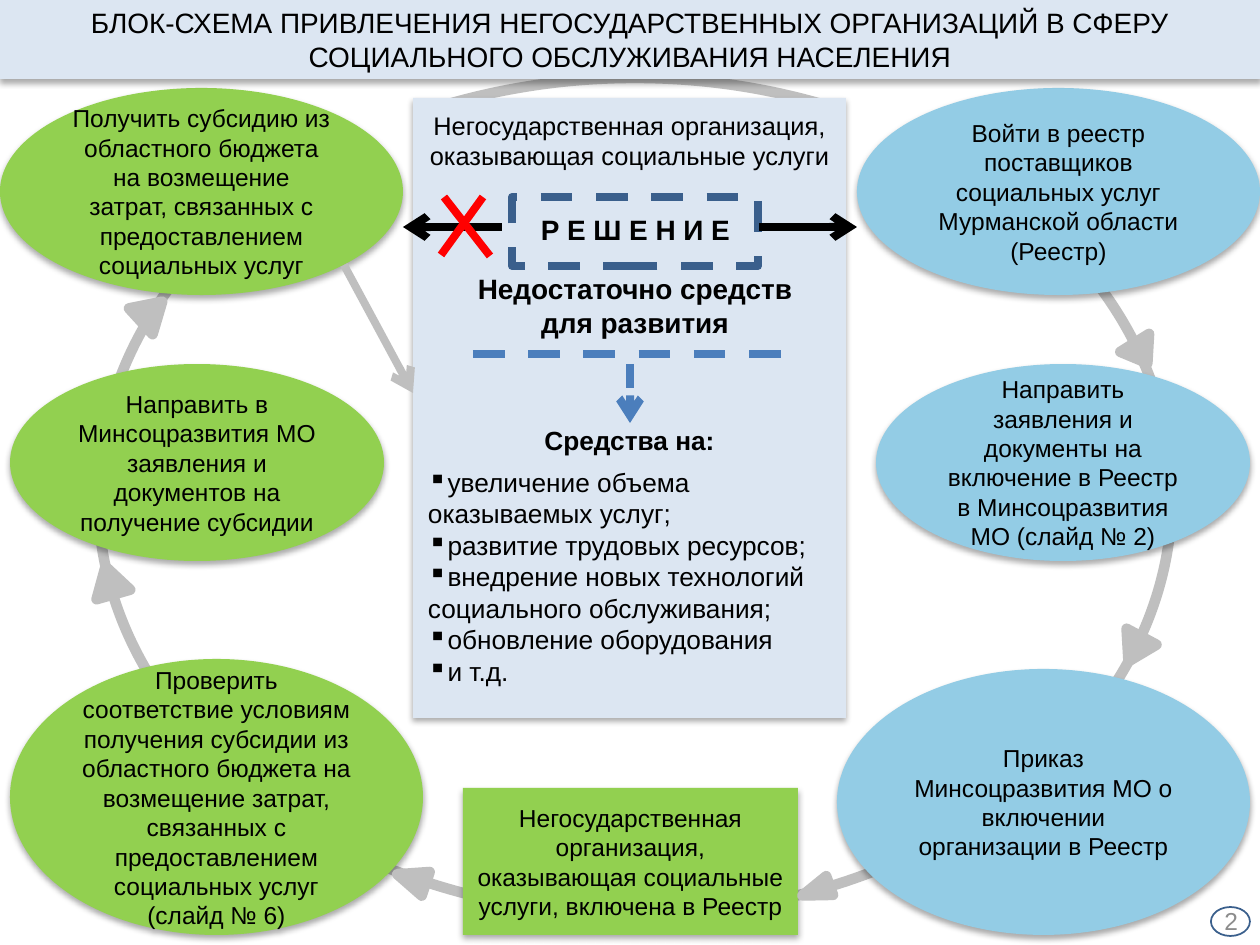
from lxml.etree import SubElement
from pptx import Presentation
from pptx.dml.color import RGBColor
from pptx.enum.dml import MSO_LINE
from pptx.enum.shapes import MSO_CONNECTOR, MSO_SHAPE
from pptx.enum.text import MSO_ANCHOR, PP_ALIGN
from pptx.oxml.ns import qn
from pptx.util import Pt

SCALE = 914400 / 126
GREEN, BLUE, PALE, GREY = "92D050", "93CCE5", "DCE6F2", "BFBFBF"
BLACK, RED, WHITE, NAVY, STEEL = "000000", "FF0000", "FFFFFF", "3A5F8C", "4B7EBC"
RECTANGLE, ELLIPSE, TRIANGLE = MSO_SHAPE.RECTANGLE, MSO_SHAPE.OVAL, MSO_SHAPE.ISOSCELES_TRIANGLE

TITLE = ("БЛОК-СХЕМА ПРИВЛЕЧЕНИЯ НЕГОСУДАРСТВЕННЫХ ОРГАНИЗАЦИЙ В СФЕРУ "
         "СОЦИАЛЬНОГО ОБСЛУЖИВАНИЯ НАСЕЛЕНИЯ")
PANEL_HEADING = "Негосударственная организация, оказывающая социальные услуги"
PURPOSES = ["увеличение объема оказываемых услуг;", "развитие трудовых ресурсов;",
            "внедрение новых технологий социального обслуживания;",
            "обновление оборудования", "и т.д."]
STEPS = [
    (ELLIPSE, (837, 669, 413, 266), BLUE,
     ["Приказ Минсоцразвития МО о включении организации в Реестр"]),
    (ELLIPSE, (10, 364, 374, 197), GREEN,
     ["Направить в Минсоцразвития МО заявления и документов на получение субсидии"]),
    (ELLIPSE, (0, 88, 403, 207), GREEN,
     ["Получить субсидию из областного бюджета на возмещение затрат, "
      "связанных с предоставлением социальных услуг"]),
    (ELLIPSE, (876, 364, 374, 197), BLUE,
     ["Направить заявления и документы на включение в Реестр "
      "в Минсоцразвития МО (слайд № 2)"]),
    (RECTANGLE, (463, 788, 335, 147), GREEN,
     ["Негосударственная организация, оказывающая социальные услуги, включена в Реестр"]),
    (ELLIPSE, (10, 659, 413, 276), GREEN,
     ["Проверить",
      "соответствие условиям получения субсидии из областного бюджета на возмещение "
      "затрат, связанных с предоставлением социальных услуг",
      "(слайд № 6)"]),
    (ELLIPSE, (857, 88, 403, 207), BLUE,
     ["Войти в реестр поставщиков социальных услуг Мурманской области", "(Реестр)"]),
]
RING_ARROWS = [
    ((1124, 341, 34, 24), 148), ((399, 864, 25, 30), 288.6), ((806, 876, 20, 29), 249.9),
    ((1118, 635, 34, 28), 208), ((92, 566, 35, 29), 344.2), ((134, 297, 35, 29), 47.6),
]
LINES = [
    ((502, 227), (403, 227), BLACK, None, True),
    ((441, 255), (483, 197), RED, None, False),
    ((490, 256), (444, 197), RED, None, False),
    ((759, 227), (857, 227), BLACK, None, True),
    ((630, 364), (630, 423), STEEL, MSO_LINE.SQUARE_DOT, True),
    ((473, 354), (788, 354), STEEL, MSO_LINE.DASH, False),
    ((344, 265), (413, 393), GREY, None, True),
]


def px(value):
    """Turn pixels into EMU."""
    return round(value * SCALE)


def color(value):
    """Turn a hex string into a colour."""
    return RGBColor.from_string(value)


def add_shape(slide, kind, box, fill=None, line=None, width=6, shadow=False, rotation=0):
    """Add a preset shape with its fill, outline and shadow."""
    shape = slide.shapes.add_shape(kind, *map(px, box))
    shape.rotation = rotation
    shape.shadow.inherit = False
    if fill:
        shape.fill.solid()
        shape.fill.fore_color.rgb = color(fill)
    else:
        shape.fill.background()
    if line:
        shape.line.color.rgb = color(line)
        shape.line.width = Pt(width)
    else:
        shape.line.fill.background()
    if shadow:
        effects = shape._element.spPr.find(qn("a:effectLst"))
        outer = SubElement(effects, qn("a:outerShdw"), blurRad=str(Pt(3.5)), dist=str(Pt(2.2)),
                           dir="5400000", algn="ctr", rotWithShape="0")
        shade = SubElement(outer, qn("a:srgbClr"), val=BLACK)
        SubElement(shade, qn("a:alpha"), val="32000")
    return shape


def add_line(slide, start, end, line_color, dash, arrow):
    """Add a straight connector, dashed or with an arrowhead where asked."""
    line = slide.shapes.add_connector(MSO_CONNECTOR.STRAIGHT, *map(px, start + end))
    line.line.color.rgb = color(line_color)
    line.line.width = Pt(4.5)
    if dash:
        line.line.dash_style = dash
    if arrow:
        SubElement(line.line._get_or_add_ln(), qn("a:tailEnd"), type="arrow")
    SubElement(line._element.spPr, qn("a:effectLst"))


def write(shape, paragraphs, size=14, bold=False, text_color=BLACK, align=PP_ALIGN.CENTER,
          anchor=MSO_ANCHOR.MIDDLE, insets=(13, 6, 13, 6), bullet=None, heading=None):
    """Fill a shape with paragraphs, led by a bold centred heading if there is one."""
    frame = shape.text_frame
    frame.word_wrap = True
    frame.vertical_anchor = anchor
    frame.margin_left, frame.margin_top, frame.margin_right, frame.margin_bottom = map(px, insets)
    rows = [(text, False) for text in paragraphs]
    if heading:
        rows.insert(0, (heading, True))
    for index, (text, is_heading) in enumerate(rows):
        paragraph = frame.add_paragraph() if index else frame.paragraphs[0]
        paragraph.alignment = PP_ALIGN.CENTER if is_heading else align
        run = paragraph.add_run()
        run.text = text
        run.font.name = "Arial"
        run.font.size = Pt(size)
        run.font.bold = bold or is_heading
        run.font.color.rgb = color(text_color)
        if is_heading:
            paragraph.space_after = Pt(6)
        elif bullet:
            SubElement(paragraph._p.get_or_add_pPr(), qn("a:buChar"), char=bullet)


def add_text(slide, box, paragraphs, **text_format):
    """Add a text box with formatted paragraphs."""
    write(slide.shapes.add_textbox(*map(px, box)), paragraphs, **text_format)


def main():
    """Build the slide and save it."""
    presentation = Presentation()
    presentation.slide_width, presentation.slide_height = px(1260), px(945)
    slide = presentation.slides.add_slide(presentation.slide_layouts[6])

    add_shape(slide, ELLIPSE, (98, 78, 1074, 837), line=GREY)
    for left in (325, 777):
        add_shape(slide, RECTANGLE, (left, 98, 217, 108), fill=WHITE)
    for kind, box, fill, paragraphs in STEPS:
        insets = (5, 6, 5, 5) if len(paragraphs) == 3 else (13, 6, 13, 6)
        write(add_shape(slide, kind, box, fill, shadow=True), paragraphs, insets=insets)

    panel = add_shape(slide, RECTANGLE, (413, 98, 433, 620), PALE, shadow=True)
    write(panel, [PANEL_HEADING], size=14.5, anchor=MSO_ANCHOR.TOP, insets=(13, 12, 13, 6))
    add_text(slide, (423, 403, 413, 305), PURPOSES, size=15, align=PP_ALIGN.LEFT,
             insets=(5, 6, 5, 6), bullet="▪", heading="Средства на:")
    add_text(slide, (463, 266, 344, 81), ["Недостаточно средств для развития"],
             size=16, bold=True, anchor=MSO_ANCHOR.TOP)
    add_text(slide, (473, 207, 325, 47), ["Р Е Ш Е Н И Е"],
             size=16, bold=True, anchor=MSO_ANCHOR.TOP)
    decision = add_shape(slide, RECTANGLE, (512, 197, 246, 69), line=NAVY, width=4.5)
    decision.line.dash_style = MSO_LINE.DASH

    for line in LINES:
        add_line(slide, *line)
    for box, rotation in RING_ARROWS:
        add_shape(slide, TRIANGLE, box, GREY, GREY, rotation=rotation)

    title = add_shape(slide, RECTANGLE, (0, 0, 1260, 79), PALE, shadow=True)
    write(title, [TITLE], size=16)
    add_text(slide, (1172, 896, 77, 50), ["2"], text_color="8C8C8C",
             align=PP_ALIGN.RIGHT, insets=(11, 5, 11, 5))
    add_shape(slide, ELLIPSE, (1211, 907, 39, 29), line=NAVY, width=1)
    presentation.save("out.pptx")


if __name__ == "__main__":
    main()
